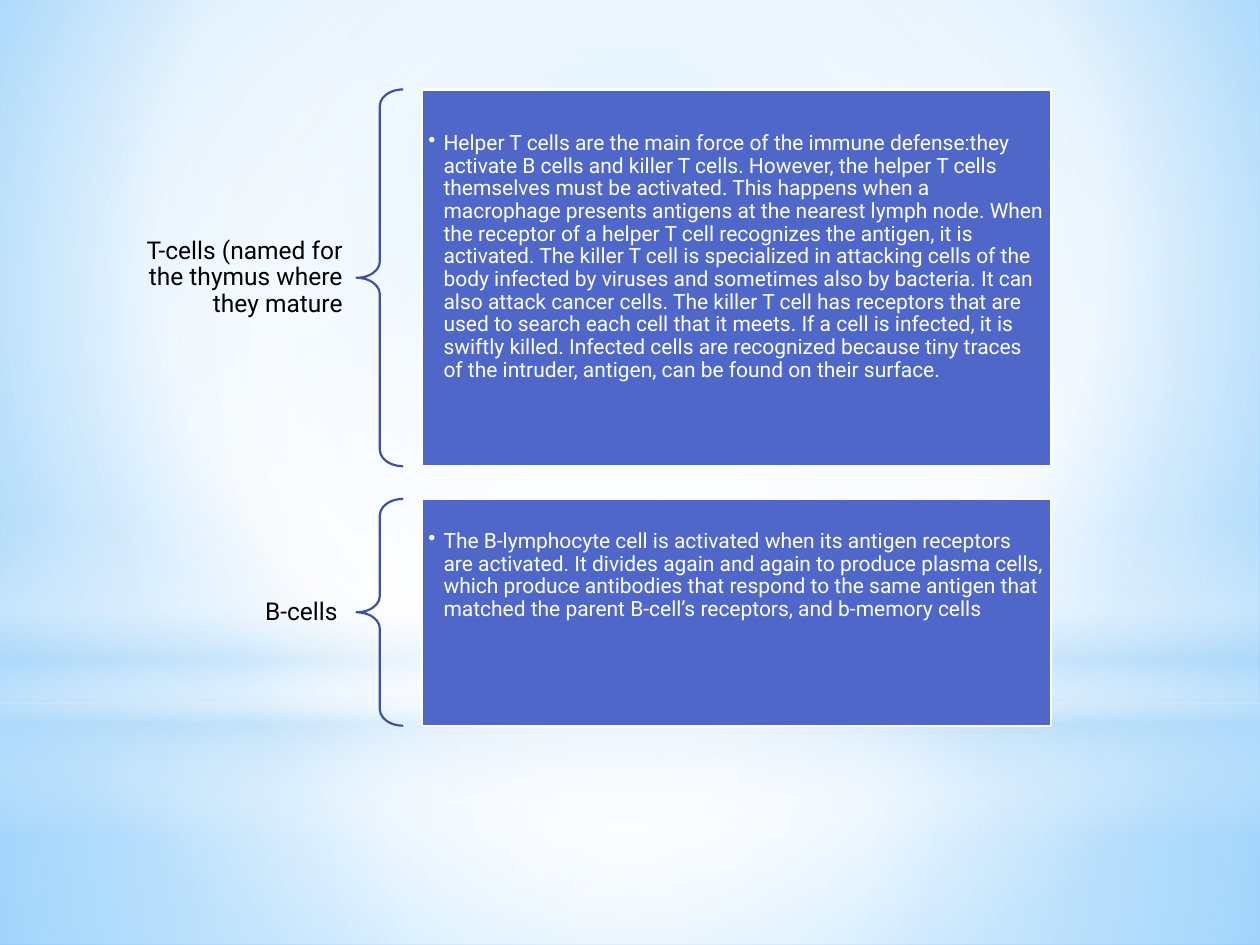
from pptx import Presentation
from pptx.dml.color import RGBColor
from pptx.enum.shapes import MSO_SHAPE as Shape
from pptx.enum.text import MSO_ANCHOR as Anchor, PP_ALIGN as Align
from pptx.oxml import parse_xml
from pptx.oxml.ns import nsdecls
from pptx.util import Inches, Pt

FONT = "Roboto"
BLUE, BRACE_BLUE, WHITE, BLACK = "4E67C8", "3E52A0", "FFFFFF", "000000"
SKY = "B4DCFA"

# Content: label, label right inset, description, description top inset, top, height
CELL_TYPES = [
    ("T-cells (named for the thymus where they mature", 0.11,
     "Helper T cells are the main force of the immune defense:they activate B cells "
     "and killer T cells. However, the helper T cells themselves must be activated. "
     "This happens when a macrophage presents antigens at the nearest lymph node. "
     "When the receptor of a helper T cell recognizes the antigen, it is activated. "
     "The killer T cell is specialized in attacking cells of the body infected by "
     "viruses and sometimes also by bacteria. It can also attack cancer cells. "
     "The killer T cell has receptors that are used to search each cell that it meets. "
     "If a cell is infected, it is swiftly killed. Infected cells are recognized because "
     "tiny traces of the intruder, antigen, can be found on their surface.",
     0.34, 0.71, 2.99),
    ("B-cells", 0.15,
     "The B-lymphocyte cell is activated when its antigen receptors are activated. "
     "It divides again and again to produce plasma cells, which produce antibodies that "
     "respond to the same antigen that matched the parent B-cell’s receptors, and "
     "b-memory cells",
     0.25, 3.96, 1.8),
]

# Backdrop: gradient stops are (position %, colour, opacity %)
CENTRE = (50, 50, 50, 50)
PAGE_STOPS = [(0, "9ED5FF", 100), (60, WHITE, 100), (100, "5BB9FF", 100)]
BACKDROP = [
    (Shape.RECTANGLE, (0, 5.58, 10, 1.92),
     [(0, WHITE, 91), (37, WHITE, 76), (100, SKY, 79)], CENTRE),
    (Shape.RECTANGLE, (0, 0, 10, 5.58),
     [(0, WHITE, 89), (48, WHITE, 62), (100, SKY, 79)], CENTRE),
    (Shape.RECTANGLE, (0, 4.12, 10, 2.5),
     [(0, WHITE, 0), (29, WHITE, 30), (45, SKY, 40), (55, WHITE, 26),
      (65, SKY, 60), (100, WHITE, 0)], None),
    (Shape.OVAL, (0, 1.75, 10, 5.58), [(0, WHITE, 100), (56, WHITE, 0)], CENTRE),
]

# Columns: left, width
LABEL, BRACE, PANEL = (1, 1.83), (2.83, 0.37), (3.35, 4.99)
LABEL_HEIGHT = 1.41


def colour(value):
    return RGBColor.from_string(value)


def set_gradient(owner, fill, stops, focus):
    """Radial gradient around focus, or top to bottom when focus is None."""
    fill.gradient()
    old = owner._element.xpath(".//a:gradFill")[0]
    stop_xml = "".join(
        f'<a:gs pos="{place * 1000}"><a:srgbClr val="{value}">'
        f'<a:alpha val="{opacity * 1000}"/></a:srgbClr></a:gs>'
        for place, value, opacity in stops)
    if focus:
        sides = " ".join(f'{side}="{part * 1000}"' for side, part in zip("ltrb", focus))
        direction = f'<a:path path="circle"><a:fillToRect {sides}/></a:path>'
    else:
        direction = '<a:lin ang="5400000" scaled="0"/>'
    new = parse_xml(f'<a:gradFill {nsdecls("a")} rotWithShape="1">'
                    f'<a:gsLst>{stop_xml}</a:gsLst>{direction}</a:gradFill>')
    old.getparent().replace(old, new)


def add_shape(page, kind, area, line=None):
    shape = page.shapes.add_shape(kind, *map(Inches, area))
    shape.shadow.inherit = False
    if line:
        shape.line.color.rgb = colour(line)
        shape.line.width = Pt(1.25)
    else:
        shape.line.fill.background()
    return shape


def write(shape, text, size, ink, align, anchor, insets, after):
    frame = shape.text_frame
    frame.word_wrap = True
    frame.vertical_anchor = anchor
    (frame.margin_left, frame.margin_top,
     frame.margin_right, frame.margin_bottom) = map(Inches, insets)
    frame.text = text
    para = frame.paragraphs[0]
    para.alignment = align
    para.line_spacing = 0.9
    para.space_after = Pt(after)
    font = para.runs[0].font
    font.name, font.size, font.color.rgb = FONT, Pt(size), colour(ink)
    return para


def add_bullet(para):
    props = para._p.get_or_add_pPr()
    props.set("marL", str(Inches(0.12)))
    props.set("indent", str(-Inches(0.12)))
    props.append(parse_xml(f'<a:buChar {nsdecls("a")} char="•"/>'))


def add_cell_type(page, label, label_inset, description, text_inset, top, height):
    # Label, centred on the brace
    label_top = top + (height - LABEL_HEIGHT) / 2
    box = page.shapes.add_textbox(
        *map(Inches, (LABEL[0], label_top, LABEL[1], LABEL_HEIGHT)))
    write(box, label, 14, BLACK, Align.RIGHT, Anchor.MIDDLE,
          (0.11, 0.04, label_inset, 0.04), 0)

    # Brace
    brace = add_shape(page, Shape.LEFT_BRACE, (BRACE[0], top, BRACE[1], height), BRACE_BLUE)
    brace.fill.background()
    brace.adjustments[0], brace.adjustments[1] = 0.35, 0.5

    # Description panel
    panel = add_shape(page, Shape.RECTANGLE, (PANEL[0], top, PANEL[1], height), WHITE)
    panel.fill.solid()
    panel.fill.fore_color.rgb = colour(BLUE)
    add_bullet(write(panel, description, 12, WHITE, Align.LEFT, Anchor.TOP,
                     (0.05, text_inset, 0.05, 0.05), 0))


def main():
    deck = Presentation()
    deck.slide_width, deck.slide_height = Inches(10), Inches(7.5)
    page = deck.slides.add_slide(deck.slide_layouts[6])

    # Backdrop
    set_gradient(page, page.background.fill, PAGE_STOPS, (20, 10, 20, 60))
    for kind, area, stops, focus in BACKDROP:
        shape = add_shape(page, kind, area)
        set_gradient(shape, shape.fill, stops, focus)

    # Cell types
    for cell_type in CELL_TYPES:
        add_cell_type(page, *cell_type)

    deck.save("out.pptx")


if __name__ == "__main__":
    main()
